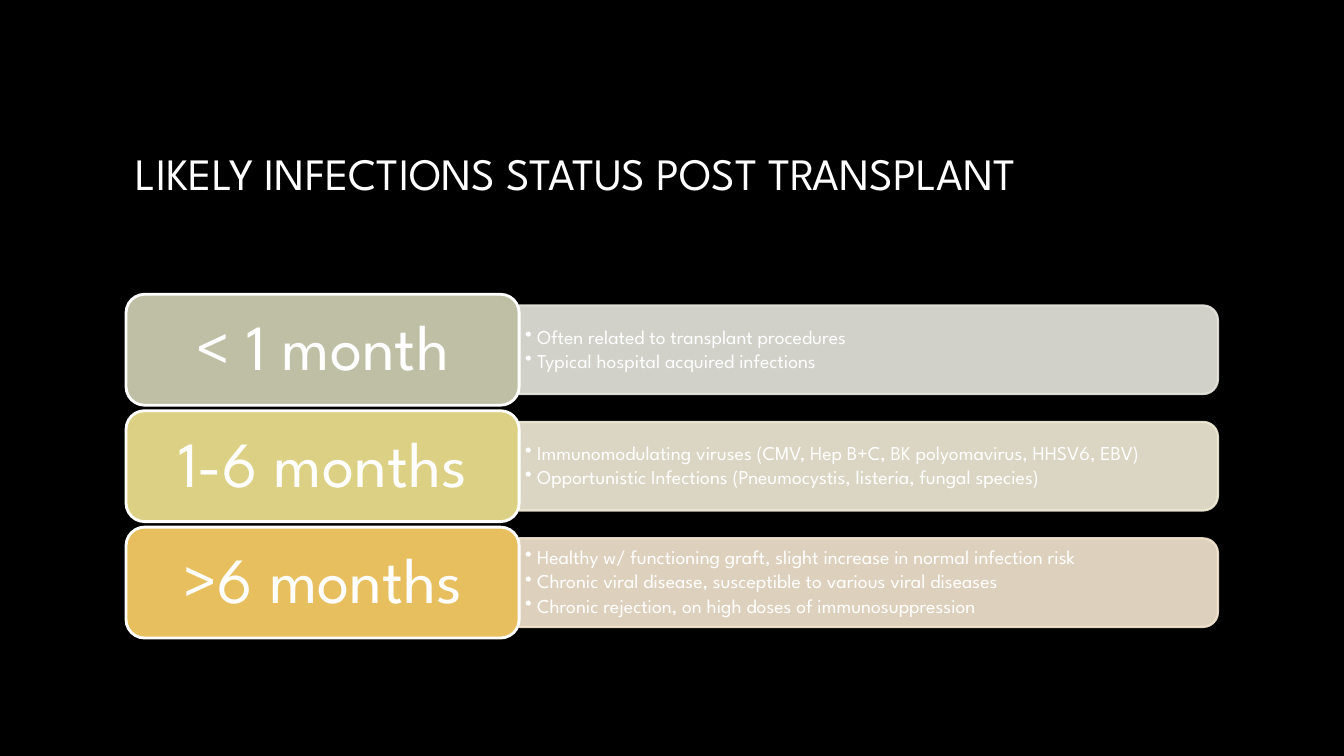
from lxml import etree
from pptx import Presentation, util as u
from pptx.dml.color import RGBColor
from pptx.enum import shapes, text
from pptx.oxml.ns import qn

TITLE = "LIKELY INFECTIONS STATUS POST TRANSPLANT"
BLACK = RGBColor(0x00, 0x00, 0x00)
WHITE = RGBColor(0xFF, 0xFF, 0xFF)
SAGE, PALE_SAGE = RGBColor(0xBF, 0xBF, 0xA5), RGBColor(0xE8, 0xE8, 0xE1)
LIME, PALE_LIME = RGBColor(0xDC, 0xD0, 0x84), RGBColor(0xF2, 0xEE, 0xD9)
AMBER, PALE_AMBER = RGBColor(0xE7, 0xBF, 0x5F), RGBColor(0xF6, 0xE8, 0xD2)

PERIODS = [
    ("< 1 month", SAGE, PALE_SAGE, [
        "Often related to transplant procedures",
        "Typical hospital acquired infections"]),
    ("1-6 months", LIME, PALE_LIME, [
        "Immunomodulating viruses (CMV, Hep B+C, BK polyomavirus, HHSV6, EBV)",
        "Opportunistic Infections (Pneumocystis, listeria, fungal species)"]),
    (">6 months", AMBER, PALE_AMBER, [
        "Healthy w/ functioning graft, slight increase in normal infection risk",
        "Chronic viral disease, susceptible to various viral diseases",
        "Chronic rejection, on high doses of immunosuppression"]),
]

FONT = "League Spartan"
SLIDE_WIDTH, SLIDE_HEIGHT = 13.33, 7.5
LEFT, CONTENT_WIDTH = 1.25, 10.83
LABEL_WIDTH = CONTENT_WIDTH * 0.36
PANEL_LEFT, PANEL_WIDTH = LEFT + LABEL_WIDTH, CONTENT_WIDTH * 0.64
ROWS_TOP, ROW_HEIGHT = 2.92, 1.1
ROW_PITCH = ROW_HEIGHT * 1.05
PANEL_HEIGHT = ROW_HEIGHT * 0.8


def box(left, top, width, height):
    return [u.Inches(value) for value in (left, top, width, height)]


def write(shape, lines, size, align=text.PP_ALIGN.LEFT, insets=(0.1, 0.05),
          spacing=1.0, after=0, bullet=False):
    """Fill a shape with paragraphs; after is a percentage of the line."""
    frame = shape.text_frame
    frame.word_wrap = True
    frame.vertical_anchor = text.MSO_ANCHOR.MIDDLE
    frame.margin_left = frame.margin_right = u.Inches(insets[0])
    frame.margin_top = frame.margin_bottom = u.Inches(insets[1])
    for index, line in enumerate(lines):
        paragraph = frame.add_paragraph() if index else frame.paragraphs[0]
        paragraph.text = line
        paragraph.alignment = align
        paragraph.line_spacing = spacing
        properties = paragraph._p.get_or_add_pPr()
        if after:
            gap = etree.SubElement(properties, qn("a:spcAft"))
            etree.SubElement(gap, qn("a:spcPct"), val=str(after * 1000))
        if bullet:
            indent = u.Inches(0.12)
            properties.set("marL", str(indent))
            properties.set("indent", str(-indent))
            etree.SubElement(properties, qn("a:buChar"), char="•")
        font = paragraph.runs[0].font
        font.name, font.size = FONT, u.Pt(size)
        font.color.rgb = WHITE


def add_block(slide, kind, position, fill, line, line_width):
    shape = slide.shapes.add_shape(kind, *position)
    shape.shadow.inherit = False
    shape.fill.solid()
    shape.fill.fore_color.rgb = fill
    shape.line.color.rgb = line
    shape.line.width = u.Pt(line_width)
    return shape


def add_panel(slide, middle, color, details):
    """Translucent bar rounded on its right side, with bulleted text."""
    center = PANEL_LEFT + PANEL_WIDTH / 2
    position = box(center - PANEL_HEIGHT / 2, middle - PANEL_WIDTH / 2,
                   PANEL_HEIGHT, PANEL_WIDTH)
    panel = add_block(slide, shapes.MSO_SHAPE.ROUND_2_SAME_RECTANGLE,
                      position, color, color, 1.5)
    panel.rotation = 90
    for tint in panel._element.spPr.iter(qn("a:srgbClr")):
        etree.SubElement(tint, qn("a:alpha"), val="90000")
    height = PANEL_HEIGHT * 0.9
    textbox = slide.shapes.add_textbox(
        *box(PANEL_LEFT, middle - height / 2, PANEL_WIDTH - 0.04, height))
    write(textbox, details, 14, insets=(0.06, 0.03), spacing=0.9, after=15,
          bullet=True)


def add_label(slide, top, color, period):
    label = add_block(slide, shapes.MSO_SHAPE.ROUNDED_RECTANGLE,
                      box(LEFT, top, LABEL_WIDTH, ROW_HEIGHT),
                      color, WHITE, 2)
    write(label, [period], 46, align=text.PP_ALIGN.CENTER,
          insets=(0.19, 0.1), spacing=0.9, after=35)


def main():
    presentation = Presentation()
    presentation.slide_width = u.Inches(SLIDE_WIDTH)
    presentation.slide_height = u.Inches(SLIDE_HEIGHT)
    slide = presentation.slides.add_slide(presentation.slide_layouts[6])
    slide.background.fill.solid()
    slide.background.fill.fore_color.rgb = BLACK

    title = slide.shapes.add_textbox(*box(LEFT, 0.67, CONTENT_WIDTH, 2.08))
    write(title, [TITLE], 32)
    for row, (period, color, pale, details) in enumerate(PERIODS):
        top = ROWS_TOP + row * ROW_PITCH
        add_panel(slide, top + ROW_HEIGHT / 2, pale, details)
        add_label(slide, top, color, period)
    presentation.save("out.pptx")


if __name__ == "__main__":
    main()
